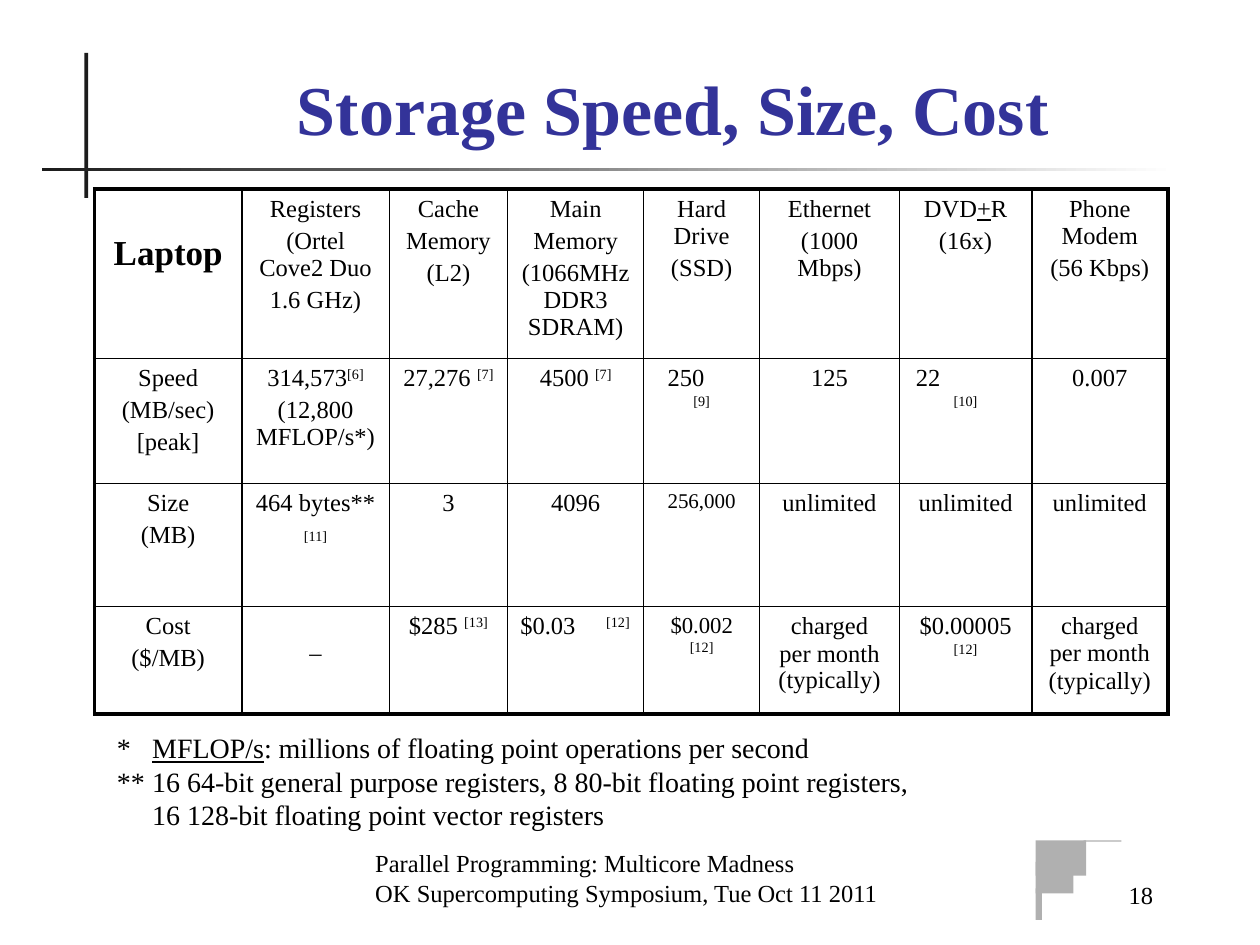
from dataclasses import dataclass

from lxml.etree import SubElement
from pptx import Presentation
from pptx.dml.color import RGBColor
from pptx.enum.shapes import MSO_SHAPE as Shape
from pptx.enum.text import MSO_ANCHOR as Anchor, PP_ALIGN as Align
from pptx.oxml import parse_xml
from pptx.oxml.ns import nsdecls, qn
from pptx.util import Inches, Pt


@dataclass(frozen=True)
class Theme:
    font: str = "Times New Roman"
    ink: str = "000000"
    title: str = "333399"
    rule: str = "1C1C1C"
    fade: str = "FFFFFF"
    logo: str = "B0B0B0"
    big: int = 40
    head: int = 20
    note: int = 16
    body: int = 14
    thick: float = 2.25
    thin: float = 1


THEME = Theme()

COLS = [1.17, 1.17, 0.94, 1.08, 0.92, 1.11, 1.05, 1.08]
ROWS = [1.24, 0.99, 0.98, 0.85]

# Each cell lists its paragraphs with "|"; _x_ underlines, ^ raises the rest.
CELLS = [
    ["Laptop", "Registers|(Ortel Cove2 Duo|1.6 GHz)", "Cache|Memory|(L2)",
     "Main|Memory|(1066MHz DDR3 SDRAM)", "Hard Drive|(SSD)",
     "Ethernet|(1000 Mbps)", "DVD_+_R|(16x)", "Phone Modem|(56 Kbps)"],
    ["Speed|(MB/sec)|[peak]", "314,573^[6]|(12,800 MFLOP/s*)", "27,276 ^[7]",
     "4500 ^[7]", "250|^[9]", "125", "22|^[10]", "0.007"],
    ["Size|(MB)", "464 bytes**|^[11]", "3", "4096", "256,000",
     "unlimited", "unlimited", "unlimited"],
    ["Cost|($/MB)", "–", "$285 ^[13]", "$0.03\t^[12]", "$0.002 ^[12]",
     "charged|per month|(typically)", "$0.00005 ^[12]",
     "charged per month (typically)"],
]


def color(code):
    return RGBColor.from_string(code)


def style(run, size, code=THEME.ink, bold=False):
    font = run.font
    font.name, font.size, font.bold = THEME.font, Pt(size), bold
    font.color.rgb = color(code)


def rich(para, text, size, bold=False):
    """Write text, where _x_ is underlined and all after ^ is superscript."""
    base, _, high = text.partition("^")
    for i, part in enumerate(base.split("_")):
        if part:
            run = para.add_run()
            run.text = part
            style(run, size, bold=bold)
            if i % 2:
                run.font.underline = True
    if high:
        run = para.add_run()
        run.text = high
        style(run, size)
        run.font._element.set("baseline", "30000")


def add_paras(frame, lines, size, align, bold=False, gap=0):
    for i, line in enumerate(lines):
        para = frame.add_paragraph() if i else frame.paragraphs[0]
        para.alignment = align
        para.space_before = Pt(gap if i else 0)
        rich(para, line, size, bold)


def add_bar(slide, left, top, width, height, code, fade=None):
    bar = slide.shapes.add_shape(
        Shape.RECTANGLE, *map(Inches, (left, top, width, height)))
    bar.shadow.inherit = False
    bar.line.fill.background()
    if fade:
        bar.fill.gradient()
        bar.fill.gradient_angle = 0
        for stop, tone, place in zip(bar.fill.gradient_stops, (code, fade), (0, 1)):
            stop.color.rgb, stop.position = color(tone), place
    else:
        bar.fill.solid()
        bar.fill.fore_color.rgb = color(code)


def add_text(slide, box, lines, size, align=Align.LEFT, anchor=Anchor.BOTTOM):
    frame = slide.shapes.add_textbox(*map(Inches, box)).text_frame
    frame.word_wrap = True
    frame.vertical_anchor = anchor
    add_paras(frame, lines, size, align)
    return frame


def add_title(slide, text):
    title = slide.shapes.title
    title.left, title.top, title.width, title.height = map(
        Inches, (1.08, 0.5, 8.52, 0.74))
    frame = title.text_frame
    frame.text = text
    frame.vertical_anchor = Anchor.BOTTOM
    para = frame.paragraphs[0]
    para.alignment = Align.CENTER
    style(para.runs[0], THEME.big, THEME.title, True)


def set_tab(para, place, align):
    tabs = SubElement(para._p.get_or_add_pPr(), qn("a:tabLst"))
    SubElement(tabs, qn("a:tab"), pos=str(Inches(place)), algn=align)


def set_edges(cell, row, col):
    """Draw thin lines between cells and thick ones round the table."""
    outer = {"L": col == 0, "R": col == len(COLS) - 1,
             "T": row == 0, "B": row == len(ROWS) - 1}
    props = cell._tc.get_or_add_tcPr()
    for i, (side, edge) in enumerate(outer.items()):
        width = Pt(THEME.thick if edge else THEME.thin)
        props.insert(i, parse_xml(
            f'<a:ln{side} {nsdecls("a")} w="{width}"><a:solidFill>'
            f'<a:srgbClr val="{THEME.ink}"/></a:solidFill></a:ln{side}>'))


def add_grid(slide):
    table = slide.shapes.add_table(
        len(ROWS), len(COLS), Inches(0.75), Inches(1.5),
        Inches(sum(COLS)), Inches(sum(ROWS))).table
    table.first_row = table.horz_banding = False
    for col, width in zip(table.columns, COLS):
        col.width = Inches(width)
    for row, height in zip(table.rows, ROWS):
        row.height = Inches(height)
    for r, line in enumerate(CELLS):
        for c, text in enumerate(line):
            cell = table.cell(r, c)
            cell.fill.background()
            set_edges(cell, r, c)
            corner = r == c == 0
            size = THEME.head if corner else THEME.body
            add_paras(cell.text_frame, text.split("|"), size, Align.CENTER,
                      bold=corner, gap=size * 0.2)
    tune(table)


def tune(table):
    """Adjust the few cells that differ from the common layout."""
    def paras(row, col):
        return table.cell(row, col).text_frame.paragraphs

    for row, col, top in ((0, 0, 0.41), (3, 1, 0.3)):
        table.cell(row, col).margin_top = Inches(top)
        paras(row, col)[0].line_spacing = 0.8
    for col, inset in ((4, 0.19), (6, 0.13)):
        first, mark = paras(1, col)
        first.alignment = Align.LEFT
        first._p.get_or_add_pPr().set("marL", str(Inches(inset - 0.1)))
        mark.space_before = Pt(0)
    paras(2, 1)[1].line_spacing = 1.2
    paras(2, 4)[0].runs[0].font.size = Pt(12)
    paras(3, 4)[0].runs[0].font.size = Pt(13)
    for para in paras(3, 5)[1:]:
        para.line_spacing = 0.8
    price = paras(3, 3)[0]
    price.alignment = Align.LEFT
    set_tab(price, 0.87, "r")


def add_notes(slide):
    frame = add_text(slide, (0.83, 5.75, 6.58, 0.91), [
        "*\t_MFLOP/s_: millions of floating point operations per second",
        "**\t16 64-bit general purpose registers, 8 80-bit floating point registers,",
        "16 128-bit floating point vector registers",
    ], THEME.note, anchor=Anchor.TOP)
    hang = Inches(0.28)
    for para, indent in zip(frame.paragraphs, (-hang, -hang, 0)):
        props = para._p.get_or_add_pPr()
        props.set("marL", str(hang))
        props.set("indent", str(indent))


def main():
    deck = Presentation()
    deck.slide_width, deck.slide_height = Inches(10), Inches(7.5)
    slide = deck.slides.add_slide(deck.slide_layouts[5])
    add_bar(slide, 0.67, 0.42, 0.03, 1.15, THEME.rule)
    add_bar(slide, 0.33, 1.33, 9, 0.03, THEME.rule, THEME.fade)
    for box in ((8.22, 6.67, 0.4, 0.28), (8.22, 6.84, 0.3, 0.25),
                (8.22, 7.05, 0.05, 0.25), (8.6, 6.67, 0.3, 0.01)):
        add_bar(slide, *box, THEME.logo)
    add_text(slide, (2.88, 6.75, 4.37, 0.5),
             ["Parallel Programming: Multicore Madness",
              "OK Supercomputing Symposium, Tue Oct 11 2011"], THEME.body)
    add_text(slide, (7.83, 6.77, 1.42, 0.5), ["18"], THEME.body, Align.RIGHT)
    add_title(slide, "Storage Speed, Size, Cost")
    add_grid(slide)
    add_notes(slide)
    deck.save("out.pptx")


if __name__ == "__main__":
    main()
